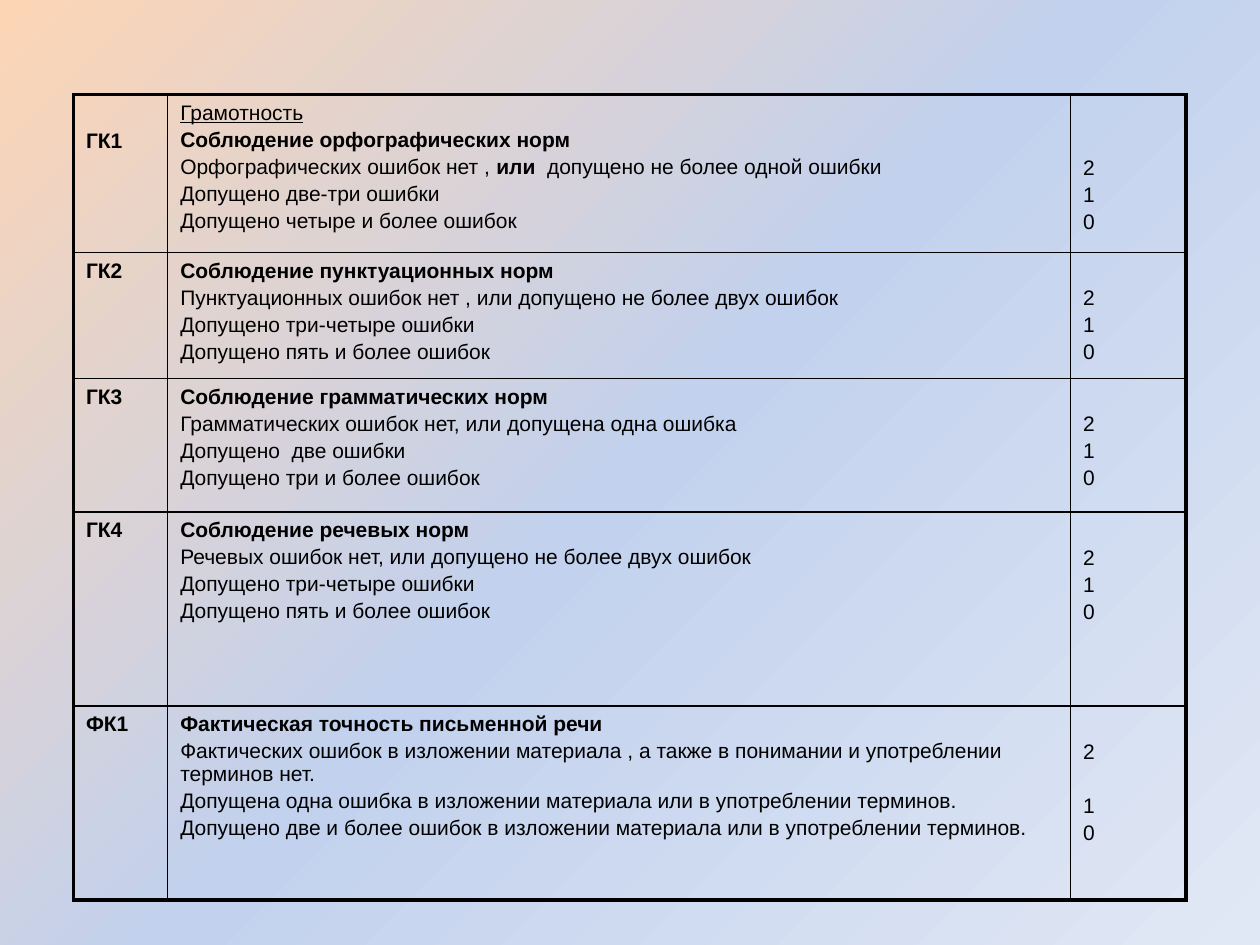
from lxml import etree
from copy import deepcopy
from pptx import Presentation
from pptx.dml.color import RGBColor
from pptx.oxml.ns import qn
from pptx.util import Cm, Pt

COLORS = {"peach": "FCD5B5", "blue": "C2D1ED", "pale": "E1E8F5", "ink": "000000"}
FONT = {"name": "Arial", "size": Pt(12)}
PLAIN = {"bold": False}
BOLD = {"bold": True}
UNDERLINED = {"bold": False, "underline": True}
THIN, THICK = Pt(1), Pt(2.25)
PAD, GAP, LINE = 0.13, 0.07, 0.56


def set_border(cell, side, width):
    ln = etree.SubElement(cell._tc.get_or_add_tcPr(), qn("a:ln" + side), w=str(int(width)))
    fill = etree.SubElement(ln, qn("a:solidFill"))
    etree.SubElement(fill, qn("a:srgbClr"), val=COLORS["ink"])


def fill_cell(cell, lines, skipped, breaks=()):
    cell.margin_top = Cm(PAD + skipped * LINE)
    tf = cell.text_frame
    for i, line in enumerate(lines):
        p = tf.paragraphs[0] if i == 0 else tf.add_paragraph()
        if i:
            p.space_before = Cm(GAP + LINE * (i in breaks))
        for text, style in line:
            r = p.add_run()
            r.text = text
            for key, value in {**FONT, **style}.items():
                setattr(r.font, key, value)
            r.font.color.rgb = RGBColor.from_string(COLORS["ink"])


criteria = [
    ("ГК1", 3.18, "Соблюдение орфографических норм", [
        [("Орфографических ошибок нет , ", PLAIN), ("или", BOLD),
         ("  допущено не более одной ошибки", PLAIN)],
        [("Допущено две-три ошибки", PLAIN)],
        [("Допущено четыре и более ошибок", PLAIN)]]),
    ("ГК2", 2.54, "Соблюдение пунктуационных норм", [
        [("Пунктуационных ошибок нет , или допущено не более двух ошибок", PLAIN)],
        [("Допущено три-четыре ошибки", PLAIN)],
        [("Допущено пять и более ошибок", PLAIN)]]),
    ("ГК3", 2.69, "Соблюдение грамматических норм", [
        [("Грамматических ошибок нет, или допущена одна ошибка", PLAIN)],
        [("Допущено  две ошибки", PLAIN)],
        [("Допущено три и более ошибок", PLAIN)]]),
    ("ГК4", 3.91, "Соблюдение речевых норм", [
        [("Речевых ошибок нет, или допущено не более двух ошибок", PLAIN)],
        [("Допущено три-четыре ошибки", PLAIN)],
        [("Допущено пять и более ошибок", PLAIN)]]),
    ("ФК1", 3.91, "Фактическая точность письменной речи", [
        [("Фактических ошибок в изложении материала , а также в понимании "
          "и употреблении терминов нет.", PLAIN)],
        [("Допущена одна ошибка в изложении материала или в употреблении терминов.", PLAIN)],
        [("Допущено две и более ошибок в изложении материала или в употреблении терминов.",
          PLAIN)]]),
]
col_widths = [1.9, 18.2, 2.33]
row_heights = [row[1] for row in criteria]
scores = [[(score, PLAIN)] for score in "210"]

prs = Presentation()
prs.slide_width, prs.slide_height = Cm(25.4), Cm(19.05)
s = prs.slides.add_slide(prs.slide_layouts[6])

bg = s.background.fill
bg.gradient()
bg.gradient_angle = 315
stop_list = s.element.find(".//" + qn("a:gsLst"))
stop_list.insert(1, deepcopy(stop_list[0]))
for stop, position, name in zip(bg.gradient_stops, (0, 0.5, 1), ("peach", "blue", "pale")):
    stop.position = position
    stop.color.rgb = RGBColor.from_string(COLORS[name])

table = s.shapes.add_table(len(criteria), len(col_widths), Cm(1.48), Cm(1.91),
                           Cm(sum(col_widths)), Cm(sum(row_heights))).table
table.first_row = table.horz_banding = False
for column, width in zip(table.columns, col_widths):
    column.width = Cm(width)

last_row, last_col = len(criteria) - 1, len(col_widths) - 1
for i, (code, height, title, levels) in enumerate(criteria):
    table.rows[i].height = Cm(height)
    heading = [[("Грамотность", UNDERLINED)]] if i == 0 else []
    offset = len(heading)
    wrapped = [1] if i == last_row else []
    fill_cell(table.cell(i, 0), [[(code, BOLD)]], offset)
    fill_cell(table.cell(i, 1), heading + [[(title, BOLD)]] + levels, 0)
    fill_cell(table.cell(i, 2), scores, offset + 1, wrapped)
    for j in range(len(col_widths)):
        cell = table.cell(i, j)
        outer = {"L": j == 0, "R": j == last_col, "T": i == 0, "B": i == last_row}
        for side, is_outer in outer.items():
            set_border(cell, side, THICK if is_outer else THIN)
        cell.fill.background()

prs.save("out.pptx")
